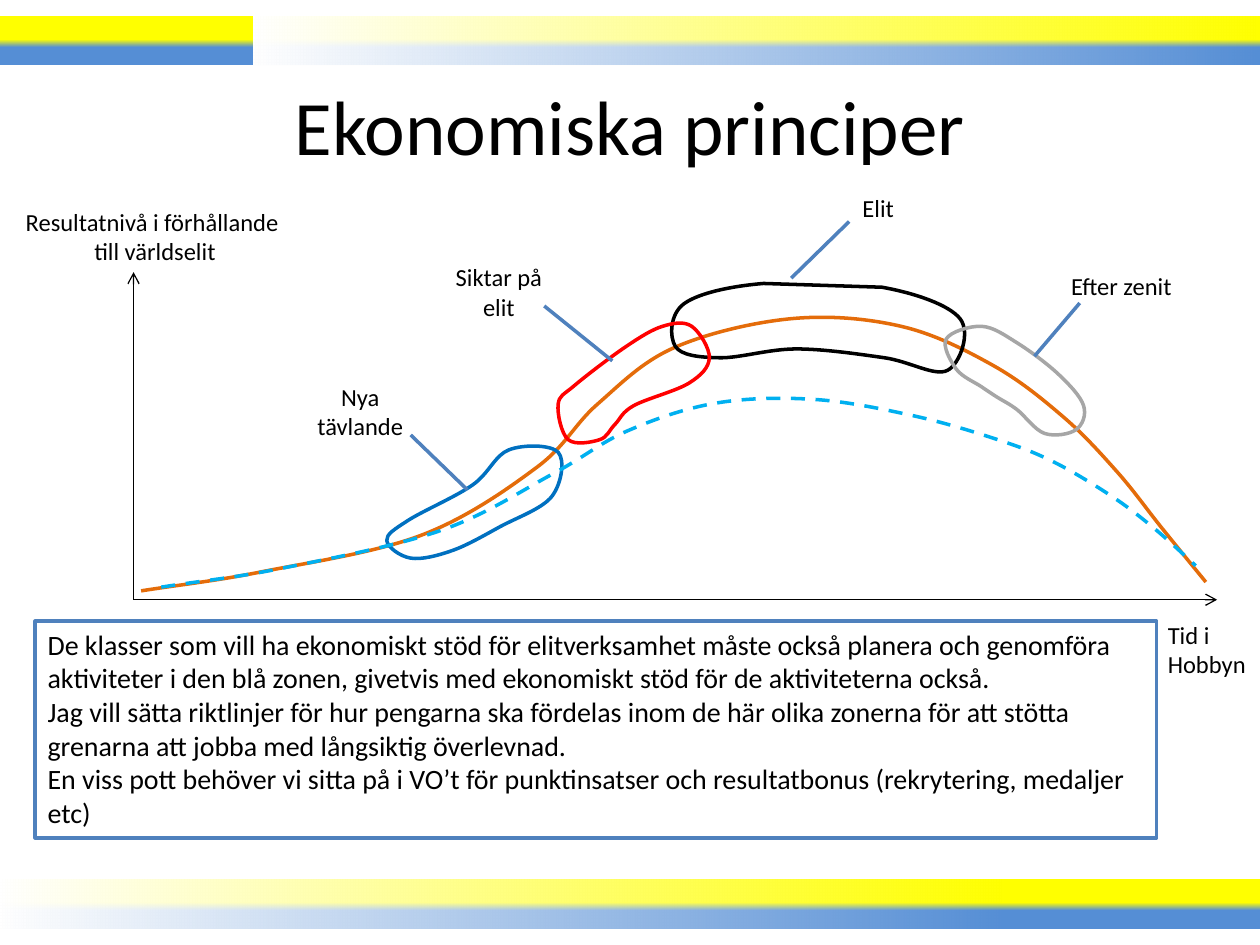
from dataclasses import dataclass
from typing import Optional

from lxml import etree
from pptx import Presentation, util as u
from pptx.dml.color import RGBColor
from pptx.enum import dml, shapes, text
from pptx.oxml import parse_xml
from pptx.oxml.ns import nsdecls, qn

COLS, ROWS = 100, 75  # slide grid


@dataclass(frozen=True)
class Theme:
    font: str = "Calibri"
    title: int = 44
    body: int = 16
    label: int = 14
    ink: str = "000000"
    paper: str = "FFFFFF"
    accent: str = "4F81BD"
    yellow: str = "FFFF00"
    blue: str = "558ED5"
    thin: float = 0.75
    thick: float = 2


@dataclass(frozen=True)
class Box:
    col: float
    row: float
    cols: float
    rows: float


@dataclass(frozen=True)
class Callout:
    words: str
    box: Box
    leader: tuple  # start row, start column, end row, end column, as shares


@dataclass(frozen=True)
class Curve:
    color: str
    points: list
    closed: bool = True
    dashed: bool = False
    flat_start: bool = False  # first segment is straight


T = Theme()
prs = Presentation()
prs.slide_width, prs.slide_height = u.Inches(10), u.Inches(7.5)
s = prs.slides.add_slide(prs.slide_layouts[6])


def x(col: float) -> int:
    return round(prs.slide_width * col / COLS)


def y(row: float) -> int:
    return round(prs.slide_height * row / ROWS)


def place(b: Box) -> tuple:
    return x(b.col), y(b.row), x(b.cols), y(b.rows)


def rgb(color: str) -> RGBColor:
    return RGBColor.from_string(color)


def stroke(sp, color: str, width: float) -> None:
    sp.line.color.rgb = rgb(color)
    sp.line.width = u.Pt(width)


def write(sp, paragraphs: list, size: int, align=text.PP_ALIGN.LEFT,
          anchor=text.MSO_ANCHOR.TOP, wrap: bool = True) -> None:
    tf = sp.text_frame
    tf.word_wrap, tf.vertical_anchor = wrap, anchor
    for i, words in enumerate(paragraphs):
        p = tf.add_paragraph() if i else tf.paragraphs[0]
        p.alignment = align
        for j, line in enumerate(words.split("\n")):
            if j:
                p.add_line_break()
            r = p.add_run()
            r.text = line
            r.font.name, r.font.size = T.font, u.Pt(size)
            r.font.color.rgb = rgb(T.ink)


def text_box(b: Box, words: str, size: int, **style) -> None:
    write(s.shapes.add_textbox(*place(b)), [words], size, **style)


def panel(kind, b: Box):
    sp = s.shapes.add_shape(kind, *place(b))
    sp.shadow.inherit = False
    sp.fill.solid()
    sp.fill.fore_color.rgb = rgb(T.paper)
    stroke(sp, T.accent, T.thick)
    return sp


def gradient_bar(b: Box, stops: list, angle: int) -> None:
    """Stops are (percent, colour, opacity percent)."""
    sp = s.shapes.add_shape(shapes.MSO_SHAPE.RECTANGLE, *place(b))
    sp.shadow.inherit = False
    sp.line.fill.background()
    gs = "".join(f'<a:gs pos="{pos * 1000}"><a:srgbClr val="{color}">'
                 f'<a:alpha val="{opacity * 1000}"/></a:srgbClr></a:gs>'
                 for pos, color, opacity in stops)
    fill = parse_xml(f'<a:gradFill {nsdecls("a")} rotWithShape="1"><a:gsLst>{gs}</a:gsLst>'
                     f'<a:lin ang="{angle * 60000}" scaled="0"/></a:gradFill>')
    sp._element.spPr.find(qn("a:prstGeom")).addnext(fill)


def axis(col: float, row: float) -> None:
    c = s.shapes.add_connector(shapes.MSO_CONNECTOR.STRAIGHT, x(10.6), y(47.6), x(col), y(row))
    stroke(c, T.ink, T.thin)
    etree.SubElement(c.line._get_or_add_ln(), qn("a:tailEnd"), type="arrow")
    etree.SubElement(c._element.spPr, qn("a:effectLst"))


def bezier_points(c: Curve) -> list:
    """Two control points and an end for each segment of a smooth curve."""
    pts = c.points
    if c.closed:
        pts = [pts[-1], *pts, *pts[:2]]
    else:
        (x0, y0), (x1, y1) = pts[:2]
        pts = [(2 * x0 - x1, 2 * y0 - y1), *pts, pts[-1]]
    out = []
    for a, b, d, e in zip(pts, pts[1:], pts[2:], pts[3:]):
        if c.flat_start and not out:
            out += [b, d, d]
        else:
            out += [tuple(q + (n - m) / 6 for m, q, n in zip(a, b, d)),
                    tuple(q - (n - m) / 6 for m, q, n in zip(b, d, e)), d]
    return out


def draw_curve(c: Curve) -> None:
    start = c.points[0]
    fb = s.shapes.build_freeform(x(start[0]), y(start[1]))
    fb.add_line_segments([(x(a), y(b)) for a, b in bezier_points(c)], close=c.closed)
    sp = fb.convert_to_shape()
    sp.shadow.inherit = False
    sp.fill.background()
    stroke(sp, c.color, T.thick)
    if c.dashed:
        sp.line.dash_style = dml.MSO_LINE.DASH
    # Each three straight segments become one cubic segment
    lines = list(sp._element.iter(qn("a:lnTo")))
    for i in range(0, len(lines), 3):
        cubic = etree.Element(qn("a:cubicBezTo"))
        lines[i].addprevious(cubic)
        for line in lines[i:i + 3]:
            cubic.append(line[0])
            line.getparent().remove(line)


CENTER, MIDDLE = text.PP_ALIGN.CENTER, text.MSO_ANCHOR.MIDDLE

# Bands at bottom and top, each faded by a white veil
for row, veil_col in ((69.8, 0), (1.3, 20.1)):
    gradient_bar(Box(0, row, COLS, 3.9), [(25, T.yellow, 100), (47, T.yellow, 100),
                                          (63, T.blue, 100), (79, T.blue, 100)], 90)
    gradient_bar(Box(veil_col, row, 79.9, 3.9), [(0, T.paper, 100), (100, T.paper, 0)], 0)

# Title, axes and axis names
text_box(Box(5, 5.2, 90, 9.4), "Ekonomiska principer", T.title, align=CENTER, anchor=MIDDLE)
axis(10.6, 21.6)
axis(96.6, 47.6)
text_box(Box(91.7, 48.7, 8.3, 5.7), "Tid i Hobbyn", T.label)
text_box(Box(0.9, 15.9, 22.8, 5.7), "Resultatnivå i förhållande \ntill världselit", T.label,
         align=CENTER, wrap=False)

# Career curves and the zones around them
for curve in (
    Curve("E46C0A", [(11.2, 46.9), (20.7, 45.4), (33.4, 42.5), (42.6, 37.1), (47.4, 32.1),
                     (53.5, 27.6), (62.8, 25.3), (71.5, 25.9), (78.8, 29), (84.4, 33.1),
                     (88.7, 37.5), (92.2, 41.9), (95.7, 46.2)], closed=False),
    Curve(T.ink, [(60.6, 22.5), (70, 22.8), (76.2, 25.3), (75.2, 29.4), (70.2, 28.4),
                  (63.2, 27.7), (57.1, 28.4), (53.6, 27.5), (54.3, 24.1)], flat_start=True),
    Curve("0070C0", [(32.4, 41.3), (37.5, 38.5), (40.4, 35.7), (44.3, 35.9), (43.8, 39.4),
                     (39.7, 41.8), (35.9, 43.7), (32.6, 44.3), (30.7, 42.9)]),
    Curve("FF0000", [(45.6, 30.6), (49.7, 27.5), (52.6, 25.9), (54.9, 25.9), (56.3, 28.4),
                     (54.7, 30.4), (50.3, 32.2), (48.8, 33.7), (47.6, 34.9), (45.1, 34.9),
                     (44.3, 32.1)]),
    Curve("A6A6A6", [(80.7, 27.2), (84, 29.7), (86, 32.2), (85.4, 34.1), (82.9, 34.4),
                     (80.7, 32.5), (79.1, 31.5), (77.9, 30.7), (75.9, 29.3), (75.1, 26.9),
                     (77.9, 25.9)]),
    Curve("00B0F0", [(12.8, 46.6), (22.4, 45.1), (35, 42.1), (43.9, 37.6), (49.8, 34.2),
                     (56.8, 32), (64.6, 31.7), (72.5, 33), (79.2, 34.9), (83.7, 36.7),
                     (88.4, 39.5), (91.8, 42.1), (94.9, 44.9)], closed=False, dashed=True),
):
    draw_curve(curve)

# Zone names with leader lines
for note in (
    Callout("Elit", Box(64.7, 13.1, 10, 6.7), (0.67, 0.27, 1.34, -0.19)),
    Callout("Nya tävlande", Box(23.6, 29.3, 10, 6.7), (0.78, 0.9, 1.43, 1.35)),
    Callout("Siktar på elit", Box(34.6, 19.8, 10, 6.7), (0.67, 0.86, 1.32, 1.4)),
    Callout("Efter zenit", Box(84, 19.3, 10, 6.7), (0.71, 0.17, 1.34, -0.19)),
):
    sp = panel(shapes.MSO_SHAPE.LINE_CALLOUT_1_NO_BORDER, note.box)
    for i, share in enumerate(note.leader):
        sp.adjustments[i] = share
    write(sp, [note.words], T.label, align=CENTER, anchor=MIDDLE)

# Explanation
sp = panel(shapes.MSO_SHAPE.RECTANGLE, Box(2.8, 49.3, 89, 17.2))
write(sp, [
    "De klasser som vill ha ekonomiskt stöd för elitverksamhet måste också planera och genomföra "
    "aktiviteter i den blå zonen, givetvis med ekonomiskt stöd för de aktiviteterna också.",
    "Jag vill sätta riktlinjer för hur pengarna ska fördelas inom de här olika zonerna för att "
    "stötta grenarna att jobba med långsiktig överlevnad.",
    "En viss pott behöver vi sitta på i VO’t för punktinsatser och resultatbonus (rekrytering, "
    "medaljer etc)",
], T.body)

prs.save("out.pptx")
